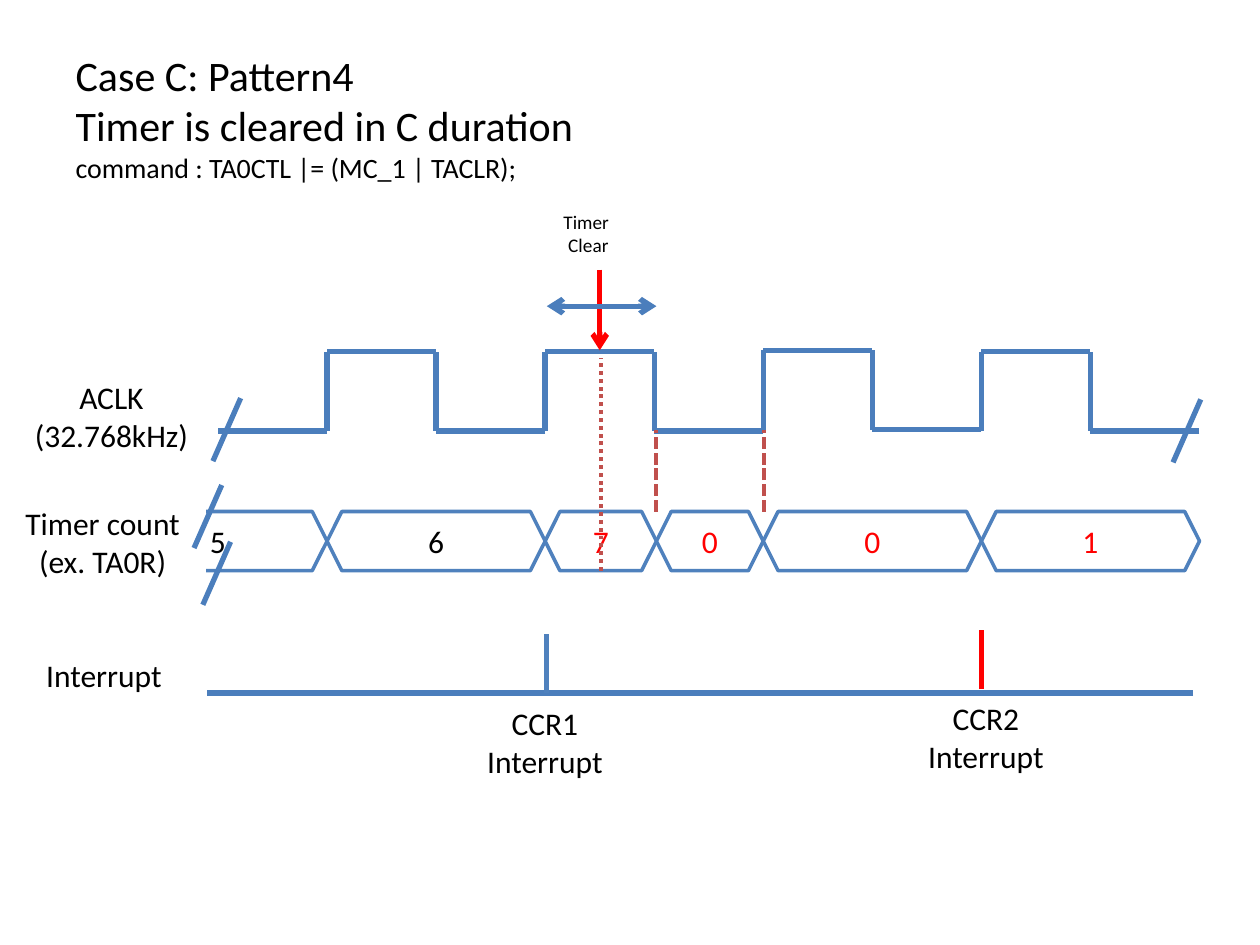
import dataclasses
import typing

import pptx
import pptx.dml.color
import pptx.enum.dml
import pptx.enum.shapes
import pptx.enum.text
import pptx.oxml.ns
import pptx.util
from lxml import etree

Inches = pptx.util.Inches
Pt = pptx.util.Pt
SHAPE = pptx.enum.shapes.MSO_SHAPE
DASH = pptx.enum.dml.MSO_LINE
ALIGN = pptx.enum.text.PP_ALIGN
FIT = pptx.enum.text.MSO_AUTO_SIZE
MIDDLE = pptx.enum.text.MSO_ANCHOR.MIDDLE

FONT = "Calibri"
BLACK, WHITE, RED = "000000", "FFFFFF", "FF0000"
BLUE, EDGE, BRICK = "4B7EBC", "4F81BD", "C0504D"

LEFT, RIGHT, COUNT = 1.73, 9.52, 9
STEP = (RIGHT - LEFT) / COUNT
HIGH, LOW = 2.79, 3.42
TOP, TALL = 4.06, 0.47


@dataclasses.dataclass
class Stroke:
    x1: float
    y1: float
    x2: float
    y2: float
    color: str = BLUE
    width: float = 3
    dash: typing.Any = None
    ends: tuple[str, ...] = ()


@dataclasses.dataclass
class Cell:
    left: float
    right: float
    text: str
    color: str = RED


@dataclasses.dataclass
class Label:
    left: float
    top: float
    width: float
    height: float
    lines: tuple[str, ...]
    size: float = 18


def paint(target: typing.Any, color: str) -> None:
    target.rgb = pptx.dml.color.RGBColor.from_string(color)


def add_run(para: typing.Any, text: str, size: float, color: str = BLACK) -> None:
    run = para.add_run()
    run.text = text
    run.font.name = FONT
    run.font.size = Pt(size)
    paint(run.font.color, color)


def draw_stroke(slide: typing.Any, item: Stroke) -> None:
    line = slide.shapes.add_connector(
        pptx.enum.shapes.MSO_CONNECTOR.STRAIGHT,
        Inches(item.x1), Inches(item.y1), Inches(item.x2), Inches(item.y2))
    paint(line.line.color, item.color)
    line.line.width = Pt(item.width)
    if item.dash is not None:
        line.line.dash_style = item.dash
    props = line.element.spPr
    pen = props.find(pptx.oxml.ns.qn("a:ln"))
    for end in item.ends:
        etree.SubElement(pen, pptx.oxml.ns.qn(f"a:{end}"), type="arrow")
    etree.SubElement(props, pptx.oxml.ns.qn("a:effectLst"))


def draw_block(slide: typing.Any, kind: typing.Any, left: float, top: float,
               width: float, height: float, edge: str) -> typing.Any:
    block = slide.shapes.add_shape(
        kind, Inches(left), Inches(top), Inches(width), Inches(height))
    block.shadow.inherit = False
    block.fill.solid()
    paint(block.fill.fore_color, WHITE)
    paint(block.line.color, edge)
    block.line.width = Pt(2)
    return block


def draw_cell(slide: typing.Any, item: Cell) -> None:
    block = draw_block(slide, SHAPE.HEXAGON, item.left, TOP,
                       item.right - item.left, TALL, EDGE)
    block.text_frame.vertical_anchor = MIDDLE
    para = block.text_frame.paragraphs[0]
    para.alignment = ALIGN.CENTER
    add_run(para, item.text, 18, item.color)


def draw_label(slide: typing.Any, item: Label) -> None:
    box = slide.shapes.add_textbox(Inches(item.left), Inches(item.top),
                                   Inches(item.width), Inches(item.height))
    frame = box.text_frame
    frame.word_wrap = False
    frame.auto_size = FIT.SHAPE_TO_FIT_TEXT
    for place, text in enumerate(item.lines):
        para = frame.add_paragraph() if place else frame.paragraphs[0]
        para.alignment = ALIGN.CENTER
        add_run(para, text, item.size)


def edge_at(place: int) -> float:
    return LEFT + STEP * place


def draw_clock(slide: typing.Any) -> None:
    for place in range(COUNT):
        left, right = edge_at(place), edge_at(place + 1)
        lift = 0.01 if place in (5, 6) else 0
        level = (HIGH if place % 2 else LOW) - lift
        draw_stroke(slide, Stroke(right, level, left, level))
        if place:
            draw_stroke(slide, Stroke(left, LOW - lift, left, HIGH - lift))


def draw_title(slide: typing.Any) -> None:
    title = slide.shapes.title
    title.left, title.top = Inches(0.5), Inches(0.3)
    title.width, title.height = Inches(9), Inches(1.25)
    frame = title.text_frame
    frame.auto_size = FIT.NONE
    frame.vertical_anchor = MIDDLE
    para = frame.paragraphs[0]
    para.alignment = ALIGN.LEFT
    for text in ("Case C: Pattern4", "Timer is cleared in C duration "):
        add_run(para, text, 24)
        para.add_line_break()
    add_run(para, "command : TA0CTL |= (MC_1 | TACLR);", 16)


CELLS = [
    Cell(edge_at(-1), edge_at(1), "5", BLACK),
    Cell(edge_at(1), edge_at(3), "6", BLACK),
    Cell(edge_at(3), 5.21, "7"),
    Cell(5.21, edge_at(5), "0"),
    Cell(edge_at(5), edge_at(7), "0"),
    Cell(edge_at(7), edge_at(9), "1"),
]
BREAKS = [(1.69, 3.66), (9.31, 3.67), (1.54, 4.35), (1.61, 4.8)]
STROKES = [Stroke(x + 0.22, y - 0.5, x, y) for x, y in BREAKS] + [
    Stroke(9.47, 5.5, 1.64, 5.5),
    Stroke(4.34, 5.5, 4.34, 5.03, EDGE),
    Stroke(7.79, 5.47, 7.79, 5, RED),
    Stroke(4.76, 2.14, 4.76, 2.78, RED, ends=("tailEnd",)),
    Stroke(4.77, 4.53, 4.77, 2.84, BRICK, 2.25, DASH.ROUND_DOT),
    Stroke(6.06, TOP, 6.06, 3.41, BRICK, 2.25, DASH.SQUARE_DOT),
    Stroke(5.21, TOP, 5.21, 3.41, BRICK, 2.25, DASH.SQUARE_DOT),
    Stroke(4.34, 2.43, 5.21, 2.43, ends=("headEnd", "tailEnd")),
]
LABELS = [
    Label(0.17, 2.95, 1.43, 0.71, ("ACLK", "(32.768kHz)")),
    Label(0.1, 3.95, 1.43, 0.71, ("Timer count", "(ex. TA0R)")),
    Label(0.26, 5.16, 1.13, 0.4, ("Interrupt",)),
    Label(3.76, 5.54, 1.13, 0.71, ("CCR1", "Interrupt")),
    Label(7.26, 5.5, 1.13, 0.71, ("CCR2", "Interrupt")),
    Label(4.37, 1.62, 0.6, 0.47, ("Timer ", "Clear"), 11),
]


def main() -> None:
    deck = pptx.Presentation()
    deck.slide_width, deck.slide_height = Inches(10), Inches(7.5)
    slide = deck.slides.add_slide(deck.slide_layouts[5])
    draw_title(slide)
    draw_clock(slide)
    for cell in CELLS:
        draw_cell(slide, cell)
    draw_block(slide, SHAPE.RECTANGLE, 0.75, 3.93, 0.87, 0.79, WHITE)
    for stroke in STROKES:
        draw_stroke(slide, stroke)
    for label in LABELS:
        draw_label(slide, label)
    deck.save("out.pptx")


if __name__ == "__main__":
    main()
